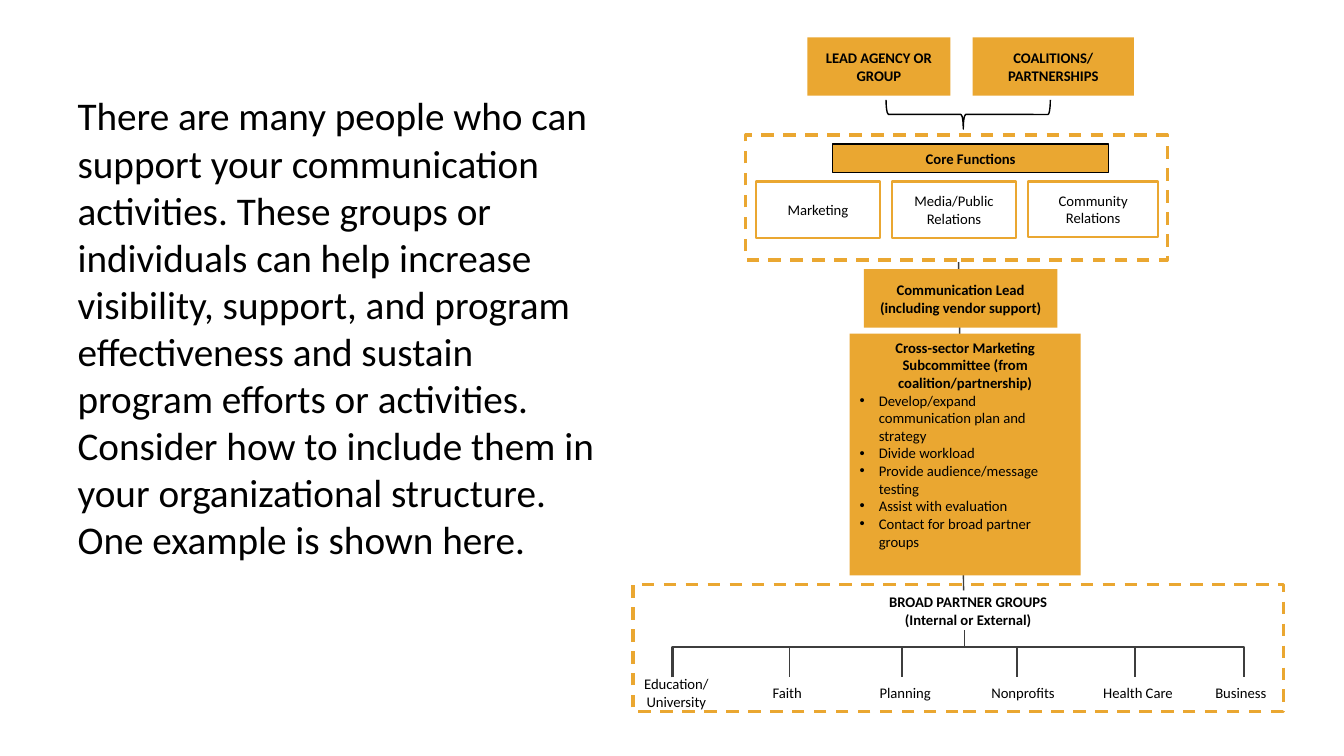
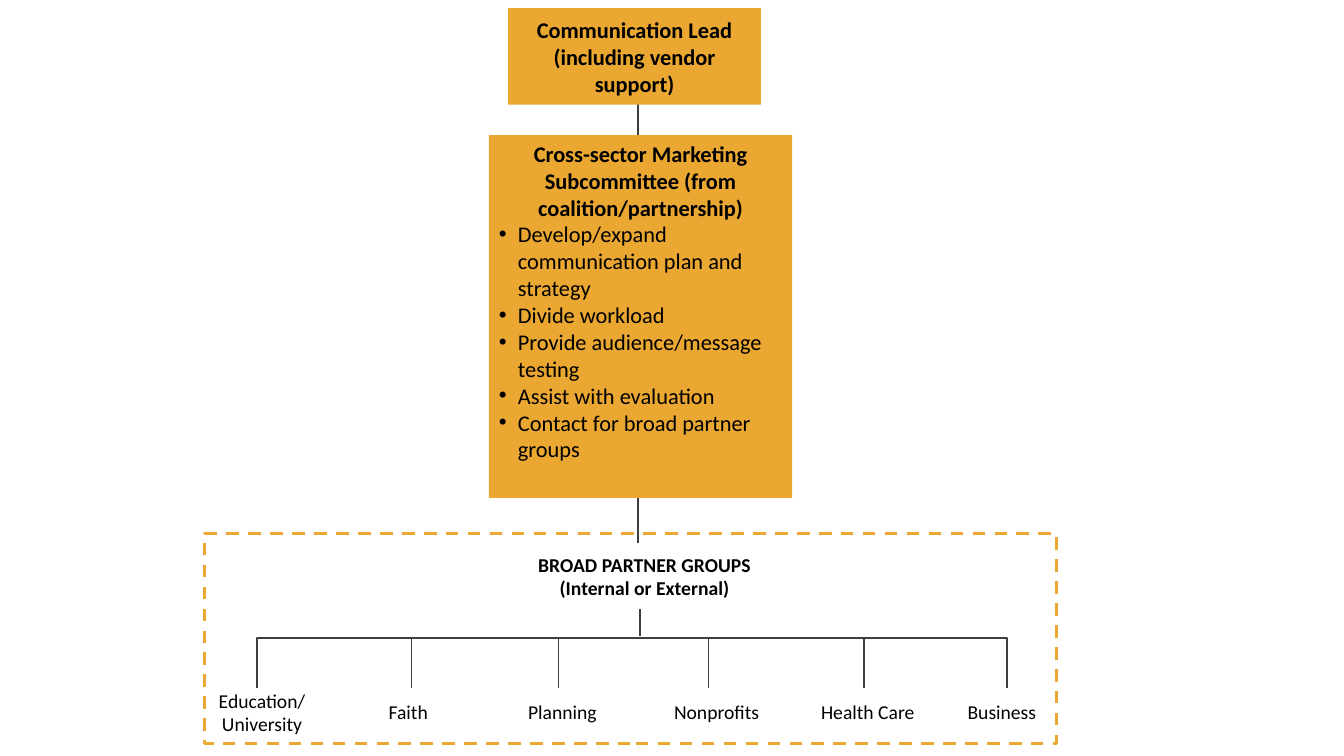
from lxml import etree
from pptx import Presentation
from pptx.dml.color import RGBColor
from pptx.enum.dml import MSO_LINE
from pptx.enum.shapes import MSO_CONNECTOR, MSO_SHAPE
from pptx.enum.text import MSO_ANCHOR, MSO_AUTO_SIZE, PP_ALIGN
from pptx.oxml.ns import qn
from pptx.util import Pt

# Shared look
PX = 9144  # 100 px to the inch
SLIDE_WIDTH, SLIDE_HEIGHT = 12192000, 6858000
FONT = "Calibri"
GOLD = RGBColor(0xEA, 0xA7, 0x31)
GRAY = RGBColor(0x3D, 0x3D, 0x3D)
BLACK = RGBColor(0, 0, 0)
WHITE = RGBColor(0xFF, 0xFF, 0xFF)
RECTANGLE, BRACE = MSO_SHAPE.RECTANGLE, MSO_SHAPE.RIGHT_BRACE
STRAIGHT, DASH = MSO_CONNECTOR.STRAIGHT, MSO_LINE.DASH
TOP, MIDDLE = MSO_ANCHOR.TOP, MSO_ANCHOR.MIDDLE
LEFT, CENTER = PP_ALIGN.LEFT, PP_ALIGN.CENTER
TITLE_ONLY, BLANK = 5, 6
BULLET_INDENT = 19

# Content
INTRODUCTION = (
    "There are many people who can support your communication activities. "
    "These groups or individuals can help increase visibility, support, and "
    "program effectiveness and sustain program efforts or activities. "
    "Consider how to include them in your organizational structure. "
    "One example is shown here."
)
LEAD = "Communication Lead (including vendor support)"
COMMITTEE = "Cross-sector Marketing Subcommittee (from coalition/partnership)"
COMMITTEE_TASKS = [
    "Develop/expand communication plan and strategy",
    "Divide workload",
    "Provide audience/message testing",
    "Assist with evaluation",
    "Contact for broad partner groups",
]
PARTNER_HEADING = ["BROAD PARTNER GROUPS", "(Internal or External)"]
PARTNERS = [
    ["Education/", "University"], ["Faith"], ["Planning"],
    ["Nonprofits"], ["Health Care"], ["Business"],
]
SPONSORS = [
    ("LEAD AGENCY OR GROUP", (801, 37, 142, 58)),
    ("COALITIONS/\nPARTNERSHIPS", (965, 37, 160, 58)),
]
CORE_FRAME = (740, 134, 418, 124)
CORE_HEADING = ("Core Functions", (826, 143, 274, 28))
CORE_FUNCTIONS = [
    ("Marketing", (750, 180, 123, 56)),
    ("Media/Public Relations", (885, 180, 123, 56)),
    ("Community Relations", (1020, 180, 129, 55)),
]

# Boxes are left, top, width, height; lines and brackets are x1, y1, x2, y2
OVERVIEW_CHART = {
    "frame": (628, 580, 645, 126),
    "bracket": (667, 642, 1234, 672),
    "drops": [783, 895, 1009, 1126],
    "stem": (957, 621, 957, 641),
    "spine": (951, 260, 956, 586),
    "committee": (843, 331, 229, 240),
    "heading": (830, 586, 261, 39),
    "label_lefts": [623, 733, 850, 967, 1081, 1183],
    "label_size": (667, 96, 40),
    "lead": (857, 267, 192, 58),
    "box_font": 10.5,
    "partner_font": 10.5,
}
DETAIL_CHART = {
    "frame": (203, 529, 845, 209),
    "bracket": (255, 633, 999, 683),
    "drops": [408, 554, 703, 857],
    "stem": (635, 597, 635, 631),
    "spine": (633, 41, 633, 539),
    "committee": (485, 134, 301, 360),
    "heading": (468, 539, 343, 65),
    "label_lefts": [197, 342, 495, 648, 798, 931],
    "label_size": (673, 126, 67),
    "lead": (504, 8, 251, 96),
    "box_font": 16,
    "partner_font": 14,
}


def scaled(lengths):
    return [length * PX for length in lengths]


def set_attributes(target, values):
    for name, value in values.items():
        setattr(target, name, value)


def write_text(shape, lines, size, bold=False, anchor=MIDDLE, align=CENTER):
    frame = shape.text_frame
    set_attributes(frame, {"word_wrap": True, "vertical_anchor": anchor,
                           "auto_size": MSO_AUTO_SIZE.NONE})
    for index, line in enumerate(lines):
        paragraph = frame.add_paragraph() if index else frame.paragraphs[0]
        paragraph.text = line
        paragraph.alignment = align
        style_font(paragraph, size, bold)


def style_font(paragraph, size, bold):
    for run in paragraph.runs:
        set_attributes(run.font, {"name": FONT, "size": Pt(size), "bold": bold})
        run.font.color.rgb = BLACK


def style_line(line, color, width, dash=None):
    line.color.rgb = color
    set_attributes(line, {"width": Pt(width), "dash_style": dash})


def add_box(slide, box, fill=None, line=None, kind=RECTANGLE):
    """Draw a preset shape; line is (colour, points[, dash])."""
    shape = slide.shapes.add_shape(kind, *scaled(box))
    shape.shadow.inherit = False
    if fill is None:
        shape.fill.background()
    else:
        shape.fill.solid()
        shape.fill.fore_color.rgb = fill
    if line is None:
        shape.line.fill.background()
    else:
        style_line(shape.line, *line)
    return shape


def add_line(slide, ends):
    connector = slide.shapes.add_connector(STRAIGHT, *scaled(ends))
    style_line(connector.line, GRAY, 1)
    etree.SubElement(connector._element.spPr, qn("a:effectLst"))


def add_bracket(slide, bracket):
    left, top, right, bottom = scaled(bracket)
    builder = slide.shapes.build_freeform(left, bottom)
    builder.add_line_segments([(left, top), (right, top), (right, bottom)], close=False)
    shape = builder.convert_to_shape()
    shape.shadow.inherit = False
    shape.fill.background()
    style_line(shape.line, GRAY, 1.75)


def add_bullet(paragraph):
    properties = paragraph._p.get_or_add_pPr()
    properties.set("marL", str(BULLET_INDENT * PX))
    properties.set("indent", str(-BULLET_INDENT * PX))
    etree.SubElement(properties, qn("a:buFont"), typeface="Arial")
    etree.SubElement(properties, qn("a:buChar"), char="•")


def add_committee(slide, box, size):
    shape = add_box(slide, box, GOLD)
    write_text(shape, [COMMITTEE], size, bold=True, anchor=TOP)
    for task in COMMITTEE_TASKS:
        paragraph = shape.text_frame.add_paragraph()
        paragraph.text = task
        paragraph.alignment = LEFT
        add_bullet(paragraph)
        style_font(paragraph, size, False)


def add_partner_chart(slide, chart):
    """Lead, subcommittee and partner groups, as both slides show them."""
    box_font, partner_font = chart["box_font"], chart["partner_font"]
    add_box(slide, chart["frame"], line=(GOLD, 2.25, DASH))
    add_bracket(slide, chart["bracket"])
    _, drop_top, _, drop_bottom = chart["bracket"]
    for x in chart["drops"]:
        add_line(slide, (x, drop_top, x, drop_bottom))
    add_line(slide, chart["stem"])
    add_line(slide, chart["spine"])
    add_committee(slide, chart["committee"], box_font)
    heading = add_box(slide, chart["heading"], WHITE)
    write_text(heading, PARTNER_HEADING, partner_font, bold=True)
    top, width, height = chart["label_size"]
    for left, lines in zip(chart["label_lefts"], PARTNERS):
        label = slide.shapes.add_textbox(*scaled((left, top, width, height)))
        write_text(label, lines, partner_font)
    lead = add_box(slide, chart["lead"], GOLD)
    write_text(lead, [LEAD], box_font, bold=True)


def add_core_functions(slide, size):
    for text, box in SPONSORS:
        write_text(add_box(slide, box, GOLD), [text], size, bold=True)
    add_box(slide, CORE_FRAME, line=(GOLD, 2.25, DASH))
    text, box = CORE_HEADING
    write_text(add_box(slide, box, GOLD, (BLACK, 1)), [text], size, bold=True)
    for text, box in CORE_FUNCTIONS:
        write_text(add_box(slide, box, WHITE, (GOLD, 1.75)), [text], size)
    # The brace is turned so that it points down to the core functions
    brace = add_box(slide, (946, 32, 29, 163), line=(BLACK, 1), kind=BRACE)
    brace.rotation = 90
    brace.adjustments[0], brace.adjustments[1] = 0.08, 0.53


def add_title(slide):
    title = slide.shapes.title
    left, top, width, height = scaled((67, 84, 548, 481))
    set_attributes(title, {"left": left, "top": top, "width": width, "height": height})
    write_text(title, [INTRODUCTION], 28, align=LEFT)


def main():
    presentation = Presentation()
    set_attributes(presentation, {"slide_width": SLIDE_WIDTH, "slide_height": SLIDE_HEIGHT})
    layouts = presentation.slide_layouts

    # Slide 1: introduction and whole structure
    overview = presentation.slides.add_slide(layouts[TITLE_ONLY])
    add_title(overview)
    add_core_functions(overview, OVERVIEW_CHART["box_font"])
    add_partner_chart(overview, OVERVIEW_CHART)

    # Slide 2: lower part of the structure, enlarged
    detail = presentation.slides.add_slide(layouts[BLANK])
    add_partner_chart(detail, DETAIL_CHART)

    presentation.save("out.pptx")


if __name__ == "__main__":
    main()
